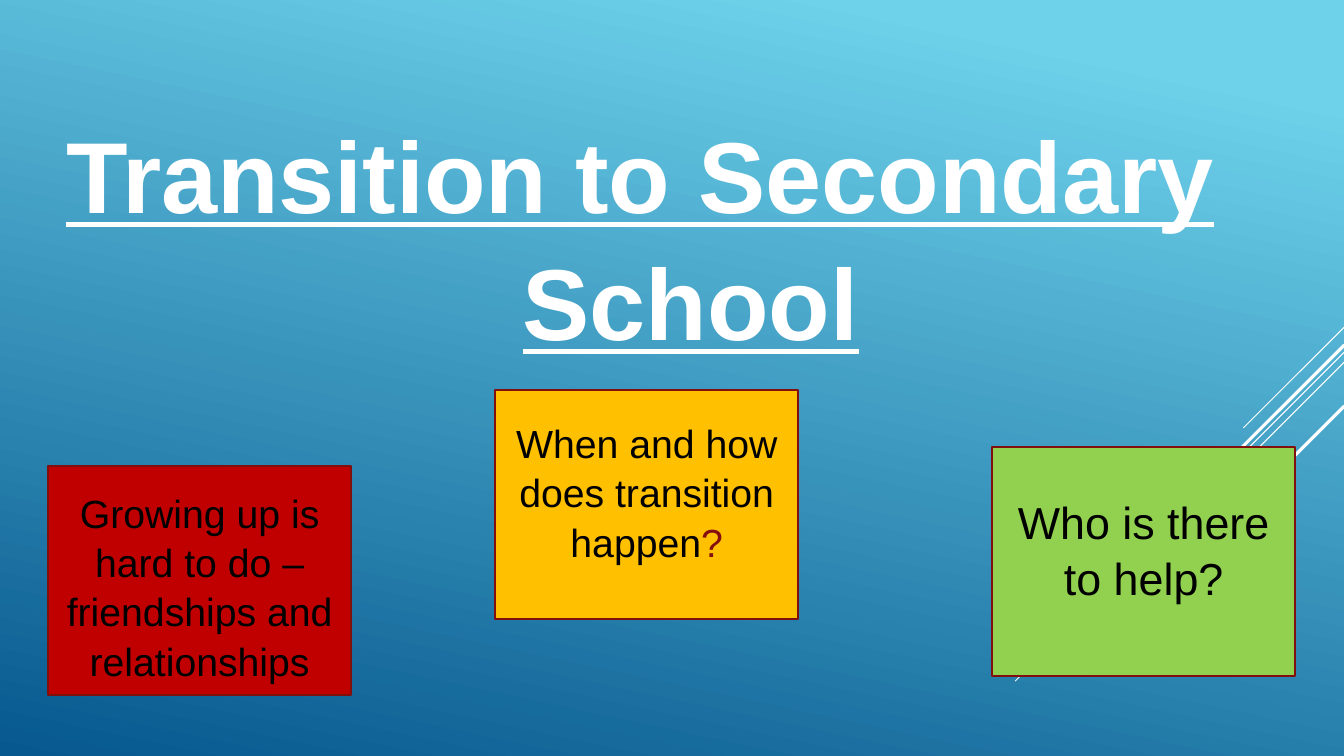
from lxml.etree import SubElement
from pptx import Presentation
from pptx.dml.color import RGBColor
from pptx.enum.shapes import MSO_CONNECTOR, MSO_SHAPE
from pptx.enum.text import MSO_ANCHOR, MSO_AUTO_SIZE, PP_ALIGN
from pptx.oxml.ns import qn
from pptx.util import Emu, Inches, Pt


def px(n):
    return Emu(round(n * 914400 / 100.8))


def rgb(value):
    return RGBColor.from_string(value)


class Deck:
    """Slide builder that keeps the shared style and the current slide."""

    font = "Arial"
    white, black = "FFFFFF", "000000"
    border, accent = "800F0D", "840F0E"
    box_size = (303, 229)

    def __init__(self, prs):
        self.s = prs.slides.add_slide(prs.slide_layouts[5])

    def background(self, stops, angle):
        fill = self.s.background.fill
        fill.gradient()
        fill.gradient_angle = 360 - angle
        for stop, (position, color) in zip(fill.gradient_stops, stops):
            stop.position = position
            stop.color.rgb = rgb(color)

    def frame(self, tf, **formats):
        base = dict(word_wrap=True, auto_size=MSO_AUTO_SIZE.NONE,
                    margin_left=px(10), margin_right=px(10),
                    margin_top=px(5), margin_bottom=px(5))
        for name, value in {**base, **formats}.items():
            setattr(tf, name, value)

    def paragraph(self, p, runs, align, **formats):
        base = dict(alignment=align, line_spacing=1.05,
                    space_before=Pt(0), space_after=Pt(0))
        for name, value in base.items():
            setattr(p, name, value)
        for text, color in runs:
            r = p.add_run()
            r.text = text
            for name, value in {"name": self.font, **formats}.items():
                setattr(r.font, name, value)
            r.font.color.rgb = rgb(color)

    def title(self, x, y, w, h, lines):
        sp = self.s.shapes.title
        sp.left, sp.top, sp.width, sp.height = map(px, (x, y, w, h))
        tf = sp.text_frame
        self.frame(tf, vertical_anchor=MSO_ANCHOR.TOP)
        for i, (text, align, indent) in enumerate(lines):
            p = tf.add_paragraph() if i else tf.paragraphs[0]
            p._p.get_or_add_pPr().set("marL", str(px(indent)))
            self.paragraph(p, [(text, self.white)], align,
                           size=Pt(72), bold=True, underline=True)

    def diagonal(self, y, run, width):
        right = 1344
        sp = self.s.shapes.add_connector(
            MSO_CONNECTOR.STRAIGHT, px(right), px(y), px(right - run), px(y + run))
        sp.line.color.rgb = rgb(self.white)
        sp.line.width = Pt(width)
        SubElement(sp._element.spPr, qn("a:effectLst"))

    def box(self, x, y, color, runs, size, top, bottom):
        sp = self.s.shapes.add_shape(
            MSO_SHAPE.RECTANGLE, *map(px, (x, y, *self.box_size)))
        sp.shadow.inherit = False
        sp.fill.solid()
        sp.fill.fore_color.rgb = rgb(color)
        sp.line.color.rgb = rgb(self.border)
        sp.line.width = Pt(1.5)
        tf = sp.text_frame
        self.frame(tf, vertical_anchor=MSO_ANCHOR.MIDDLE,
                   margin_top=px(top), margin_bottom=px(bottom))
        self.paragraph(tf.paragraphs[0], runs, PP_ALIGN.CENTER, size=Pt(size))


def main():
    prs = Presentation()
    prs.slide_width, prs.slide_height = Inches(13.33), Inches(7.5)
    deck = Deck(prs)
    deck.background([(0.1, "6ED2EB"), (1, "06588E")], 102)
    for y, run, width in [(327, 101, 0.75), (352, 329, 0.75), (362, 209, 0.75),
                          (345, 193, 2.25), (406, 140, 2.25)]:
        deck.diagonal(y, run, width)
    deck.title(0, 102, 1381, 254, [
        ("Transition to Secondary", PP_ALIGN.LEFT, 56),
        ("School", PP_ALIGN.CENTER, 0),
    ])
    black = deck.black
    deck.box(48, 466, "C00000",
             [("Growing up is hard to do – friendships and relationships", black)],
             28, 15, 5)
    deck.box(495, 390, "FFC000",
             [("When and how does transition happen", black), ("?", deck.accent)],
             28, 5, 32)
    deck.box(992, 447, "92D050", [("Who is there to help?", black)], 32, 5, 32)
    prs.save("out.pptx")


if __name__ == "__main__":
    main()
